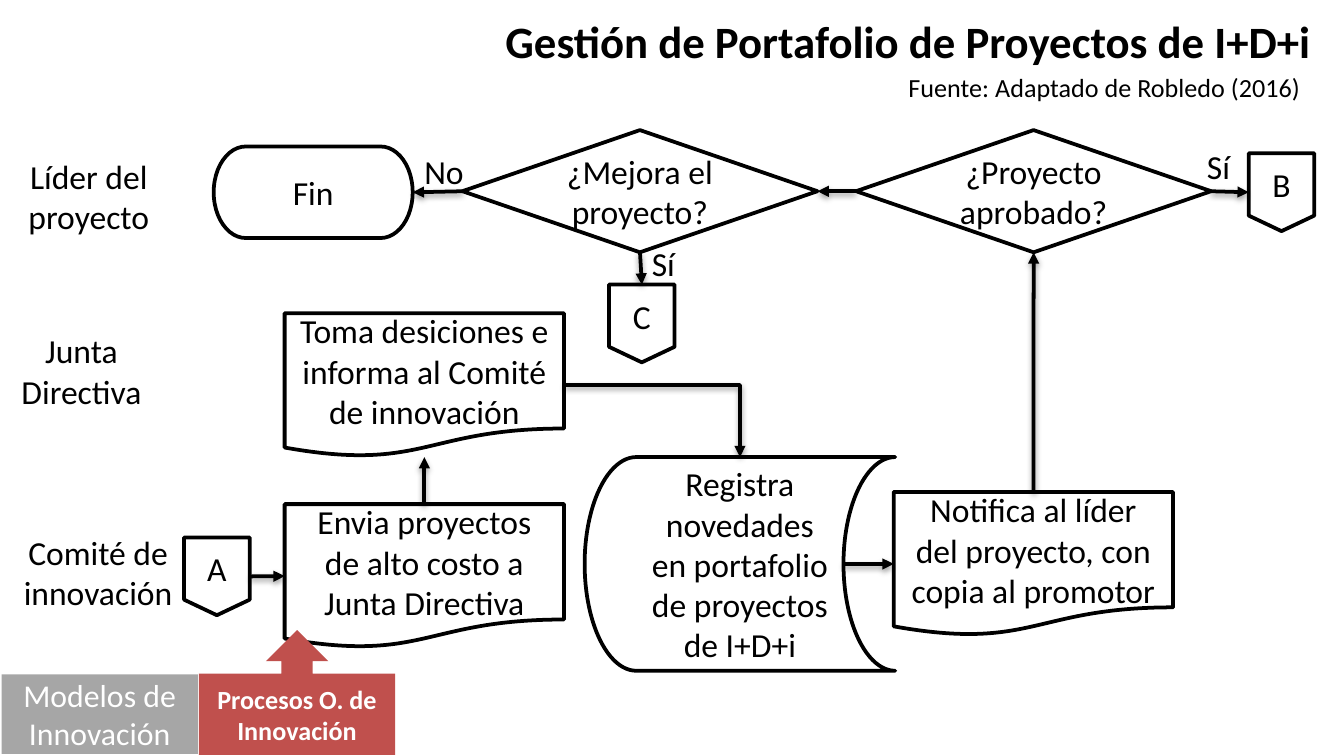
"""Builds the portfolio management flowchart slide."""
from lxml import etree
from pptx import Presentation
from pptx.dml.color import RGBColor
from pptx.enum import shapes, text
from pptx.oxml import ns, parse_xml
from pptx.util import Cm, Pt

BLACK = RGBColor(0x00, 0x00, 0x00)
WHITE = RGBColor(0xFF, 0xFF, 0xFF)
GRAY = RGBColor(0xA6, 0xA6, 0xA6)
RED = RGBColor(0xC0, 0x50, 0x4D)
KIND = shapes.MSO_SHAPE
LINK = shapes.MSO_CONNECTOR
TOP, LEFT, BOTTOM, RIGHT = range(4)
SHADOW = (
    f'<a:effectLst {ns.nsdecls("a")}><a:outerShdw blurRad="40000" dist="20000" '
    'dir="5400000" rotWithShape="0"><a:srgbClr val="000000"><a:alpha val="38000"/>'
    '</a:srgbClr></a:outerShdw></a:effectLst>'
)


def write(frame, words, size=18, color=BLACK, bold=False,
          align=text.PP_ALIGN.CENTER, anchor=text.MSO_ANCHOR.TOP, wrap=True):
    frame.word_wrap = wrap
    frame.vertical_anchor = anchor
    par = frame.paragraphs[0]
    par.alignment = align
    run = par.add_run()
    run.text = words
    font = run.font
    font.name, font.size, font.bold = "Calibri", Pt(size), bold
    font.color.rgb = color


class Chart:
    def __init__(self, slide):
        self.slide = slide
        self.width = Pt(2)

    def title(self, words, *box):
        item = self.slide.shapes.title
        item.left, item.top, item.width, item.height = map(Cm, box)
        write(item.text_frame, words, size=24, bold=True)

    def label(self, words, *box, **style):
        item = self.slide.shapes.add_textbox(*map(Cm, box))
        write(item.text_frame, words, **style)
        item.text_frame.auto_size = text.MSO_AUTO_SIZE.SHAPE_TO_FIT_TEXT

    def node(self, kind, words, *box, fill=WHITE, edge=True, **style):
        item = self.slide.shapes.add_shape(kind, *map(Cm, box))
        item.shadow.inherit = False
        item.fill.solid()
        item.fill.fore_color.rgb = fill
        if edge:
            item.line.color.rgb = BLACK
            item.line.width = self.width
        else:
            item.line.fill.background()
        write(item.text_frame, words, anchor=text.MSO_ANCHOR.MIDDLE, **style)
        return item

    def page(self, words, x, y):
        return self.node(KIND.FLOWCHART_OFFPAGE_CONNECTOR, words, x, y, 1.24, 1.47)

    def paper(self, words, x, y):
        return self.node(KIND.FLOWCHART_DOCUMENT, words, x, y, 5.28, 2.72)

    def choice(self, words, x, y):
        return self.node(KIND.FLOWCHART_DECISION, words, x, y, 6.71, 2.31)

    def arrow(self, start, end, bent=False):
        """Each end is a point in cm or a pair of node and side."""
        line = self.slide.shapes.add_connector(
            LINK.ELBOW if bent else LINK.STRAIGHT, 0, 0, 0, 0)
        if isinstance(start[0], float):
            line.begin_x, line.begin_y = map(Cm, start)
        else:
            line.begin_connect(*start)
        if isinstance(end[0], float):
            line.end_x, line.end_y = map(Cm, end)
        else:
            line.end_connect(*end)
        line.line.color.rgb = BLACK
        line.line.width = self.width
        props = line._element.spPr
        if bent:
            props.find(ns.qn("a:prstGeom")).set("prst", "bentConnector2")
        etree.SubElement(props.find(ns.qn("a:ln")), ns.qn("a:tailEnd"), type="triangle")
        props.append(parse_xml(SHADOW))


def main():
    deck = Presentation()
    deck.slide_width, deck.slide_height = Cm(25.4), Cm(14.29)
    chart = Chart(deck.slides.add_slide(deck.slide_layouts[5]))
    flush = text.PP_ALIGN.LEFT

    chart.title("Gestión de Portafolio de Proyectos de I+D+i", 8.92, 0.13, 16.48, 1.27)
    chart.label("Fuente: Adaptado de Robledo (2016)", 16.92, 1.22, 8.51, 0.86,
                size=14, align=flush)
    chart.label("Líder del proyecto", 0.03, 2.82, 3.3, 1.8)
    chart.label("Junta Directiva", 0.03, 6.12, 3.02, 1.8)
    chart.label("Comité de innovación", 0, 9.93, 3.71, 1.8)

    board = chart.paper("Toma desiciones e informa al Comité de innovación", 5.38, 5.92)
    entry = chart.page("A", 3.48, 10.16)
    send = chart.paper("Envia proyectos de alto costo a Junta Directiva", 5.38, 9.53)
    store = chart.node(KIND.FLOWCHART_STORED_DATA,
                       "Registra novedades en portafolio de proyectos de I+D+i",
                       11.05, 8.64, 5.87, 4.04)
    notice = chart.paper("Notifica al líder del proyecto, con copia al promotor", 16.89, 9.3)
    passed = chart.choice("¿Proyecto aprobado?", 16.18, 2.46)
    better = chart.choice("¿Mejora el proyecto?", 8.74, 2.46)
    go = chart.page("B", 23.6, 2.9)
    redo = chart.page("C", 11.51, 5.38)
    end = chart.node(KIND.FLOWCHART_TERMINATOR, "Fin", 4.04, 2.77, 3.76, 1.73)

    chart.arrow((entry, RIGHT), (send, LEFT))
    chart.arrow((send, TOP), (8.02, 8.64))
    chart.arrow((board, RIGHT), (store, TOP), bent=True)
    chart.arrow((15.93, 10.66), (notice, LEFT))
    chart.arrow((notice, TOP), (passed, BOTTOM))
    chart.arrow((passed, RIGHT), (go, LEFT))
    chart.arrow((passed, LEFT), (better, RIGHT))
    chart.arrow((better, BOTTOM), (redo, TOP))
    chart.arrow((better, LEFT), (end, RIGHT))

    for words, x, y, wide in (("Sí", 22.56, 2.64, 0.97), ("Sí", 12.07, 4.47, 0.97),
                              ("No", 7.77, 2.72, 1.27)):
        chart.label(words, x, y, wide, 1.02, align=flush, wrap=False)

    chart.node(KIND.RECTANGLE, "Modelos de Innovación", 0.03, 12.75, 3.71, 1.5,
               fill=GRAY, edge=False, size=17, color=WHITE)
    chart.node(KIND.UP_ARROW_CALLOUT, "Procesos O. de Innovación", 3.76, 11.91, 3.71, 2.36,
               fill=RED, edge=False, size=14, color=WHITE, bold=True)
    deck.save("out.pptx")


if __name__ == "__main__":
    main()
